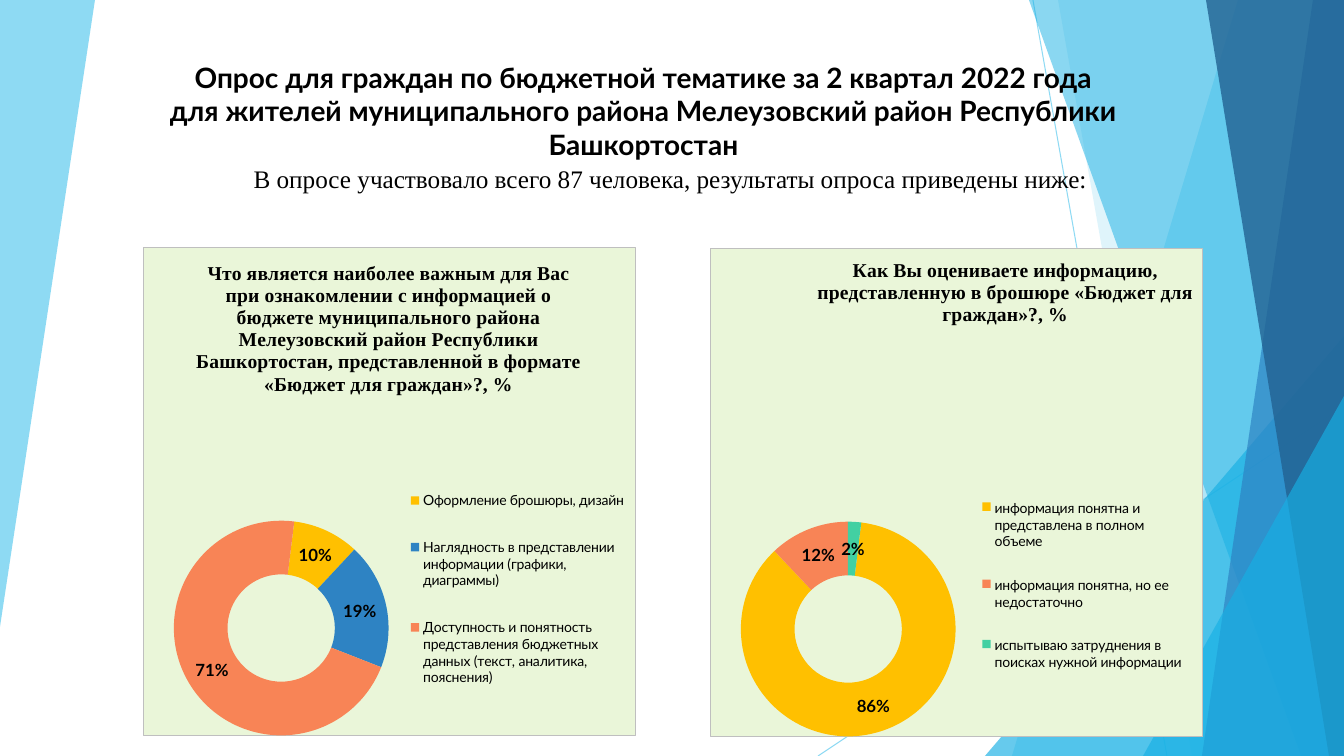
import dataclasses

import lxml.etree
import pptx
import pptx.chart.data
import pptx.dml.color
import pptx.enum.chart
import pptx.enum.shapes
import pptx.enum.text
import pptx.oxml
import pptx.oxml.ns
import pptx.util

WIDTH, HEIGHT = 1344, 756
EMU_PER_PX = 914400 / 100.8


def px(length):
    return pptx.util.Emu(round(length * EMU_PER_PX))


def rgb(color):
    return pptx.dml.color.RGBColor.from_string(color)


@dataclasses.dataclass(frozen=True)
class Theme:
    sans: str = "Lato"
    serif: str = "Times New Roman"
    text: str = "000000"
    sky: str = "5FCBEF"
    cyan: str = "17B0E4"
    blue: str = "2E83C3"
    navy: str = "226292"
    gold: str = "FFC000"
    coral: str = "F88456"
    mint: str = "42D0A2"
    panel: str = "EAF6D9"
    border: str = "BFBFBF"
    title_size: int = 20
    subtitle_size: int = 18
    chart_title_size: int = 14
    label_size: int = 12
    legend_size: int = 10
    hairline: float = 0.75


class SlideBuilder:
    def __init__(self, slide, theme):
        self.slide = slide
        self.theme = theme

    def style_font(self, font, size, name, bold=False):
        font.size = pptx.util.Pt(size)
        font.name = name
        font.bold = bold
        font.color.rgb = rgb(self.theme.text)

    def set_opacity(self, shape, percent):
        for color in shape._element.spPr.iter(pptx.oxml.ns.qn("a:srgbClr")):
            alpha = lxml.etree.SubElement(color, pptx.oxml.ns.qn("a:alpha"))
            alpha.set("val", str(percent * 1000))

    def paint(self, shape, color, opacity):
        shape.shadow.inherit = False
        shape.line.fill.background()
        shape.fill.solid()
        shape.fill.fore_color.rgb = rgb(color)
        self.set_opacity(shape, opacity)

    def polygon(self, points, color, opacity):
        builder = self.slide.shapes.build_freeform(*points[0], scale=EMU_PER_PX)
        builder.add_line_segments(points[1:], close=True)
        self.paint(builder.convert_to_shape(), color, opacity)

    def right_band(self, top_x, bottom_x, color, opacity):
        """Fill from a slanted left edge to the right side of the slide."""
        points = [(top_x, 0), (WIDTH, 0), (WIDTH, HEIGHT), (bottom_x, HEIGHT)]
        self.polygon(points, color, opacity)

    def corner_triangle(self, left, top, color, opacity):
        """Draw a triangle whose right angle is the slide's lower right corner."""
        shape = self.slide.shapes.add_shape(
            pptx.enum.shapes.MSO_SHAPE.ISOSCELES_TRIANGLE,
            px(left), px(top), px(WIDTH - left), px(HEIGHT - top))
        shape.adjustments[0] = 1
        self.paint(shape, color, opacity)

    def line(self, start, end, color, opacity):
        connector = self.slide.shapes.add_connector(
            pptx.enum.shapes.MSO_CONNECTOR.STRAIGHT, *map(px, start + end))
        connector.line.color.rgb = rgb(color)
        connector.line.width = pptx.util.Pt(self.theme.hairline)
        self.set_opacity(connector, opacity)
        lxml.etree.SubElement(connector._element.spPr, pptx.oxml.ns.qn("a:effectLst"))

    def text(self, box, content, size, font_name, anchor, bold=False):
        frame = self.slide.shapes.add_textbox(*map(px, box)).text_frame
        frame.word_wrap = True
        frame.vertical_anchor = anchor
        frame.text = content
        paragraph = frame.paragraphs[0]
        paragraph.alignment = pptx.enum.text.PP_ALIGN.CENTER
        for run in paragraph.runs:
            self.style_font(run.font, size, font_name, bold)

    def place(self, element, index, values, inner=False):
        """Give a chart part a manual layout: x, y and optionally w, h as fractions."""
        for old in element.findall(pptx.oxml.ns.qn("c:layout")):
            element.remove(old)
        target = '<c:layoutTarget val="inner"/>' if inner else ""
        modes = '<c:xMode val="edge"/><c:yMode val="edge"/>'
        numbers = "".join(f'<c:{tag} val="{value}"/>' for tag, value in zip("xywh", values))
        element.insert(index, pptx.oxml.parse_xml(
            f'<c:layout {pptx.oxml.ns.nsdecls("c")}><c:manualLayout>'
            f'{target}{modes}{numbers}</c:manualLayout></c:layout>'))

    def chart_panel(self, chart):
        theme = self.theme
        chart.element.chart.addnext(pptx.oxml.parse_xml(
            f'<c:spPr {pptx.oxml.ns.nsdecls("c", "a")}>'
            f'<a:solidFill><a:srgbClr val="{theme.panel}"/></a:solidFill>'
            f'<a:ln w="{pptx.util.Pt(theme.hairline)}"><a:solidFill>'
            f'<a:srgbClr val="{theme.border}"/></a:solidFill></a:ln></c:spPr>'))

    def doughnut(self, box, title, title_at, legend_at, answers):
        theme = self.theme
        data = pptx.chart.data.CategoryChartData()
        data.categories = [name for name, _, _ in answers]
        data.add_series("Series 1", [value for _, value, _ in answers])
        chart = self.slide.shapes.add_chart(
            pptx.enum.chart.XL_CHART_TYPE.DOUGHNUT, *map(px, box), data).chart
        self.style_font(chart.font, theme.legend_size, theme.sans)
        self.chart_panel(chart)

        chart.has_title = True
        frame = chart.chart_title.text_frame
        frame.text = title
        self.style_font(frame.paragraphs[0].runs[0].font,
                        theme.chart_title_size, theme.serif, bold=True)
        self.place(chart.chart_title._element, 1, title_at)

        chart.has_legend = True
        chart.legend.position = pptx.enum.chart.XL_LEGEND_POSITION.RIGHT
        chart.legend.include_in_layout = False
        self.style_font(chart.legend.font, theme.legend_size, theme.sans)
        self.place(chart.legend._element, 1, legend_at)

        self.place(chart.element.chart.plotArea, 0, (0.06, 0.56, 0.44, 0.44), inner=True)
        plot = chart.plots[0]
        plot.vary_by_categories = True
        for angle in plot._element.findall(pptx.oxml.ns.qn("c:firstSliceAng")):
            angle.set("val", "7")
        for index, (_, _, color) in enumerate(answers):
            fill = plot.series[0].points[index].format.fill
            fill.solid()
            fill.fore_color.rgb = rgb(color)
        plot.has_data_labels = True
        labels = plot.data_labels
        labels.show_value = False
        labels.show_percentage = True
        labels.number_format = "0%"
        labels.number_format_is_linked = False
        self.style_font(labels.font, theme.label_size, theme.sans, bold=True)


def main():
    presentation = pptx.Presentation()
    presentation.slide_width, presentation.slide_height = px(WIDTH), px(HEIGHT)
    theme = Theme()
    builder = SlideBuilder(
        presentation.slides.add_slide(presentation.slide_layouts[6]), theme)

    builder.polygon([(0, 0), (95, 0), (0, 627)], theme.sky, 70)
    builder.line((1033, 0), (1167, HEIGHT), theme.sky, 70)
    builder.line((WIDTH, 406), (818, HEIGHT), theme.sky, 70)
    builder.right_band(1238, 1012, theme.sky, 36)
    builder.right_band(1058, 1192, theme.sky, 20)
    builder.corner_triangle(985, 336, theme.cyan, 66)
    builder.right_band(1029, 1301, theme.cyan, 50)
    builder.right_band(1313, 1202, theme.blue, 70)
    builder.right_band(1206, 1329, theme.navy, 80)
    builder.corner_triangle(1143, 396, theme.cyan, 66)

    anchors = pptx.enum.text.MSO_ANCHOR
    builder.text((158, 59, 971, 107),
                 "Опрос для граждан по бюджетной тематике за 2 квартал 2022 года\v"
                 "для жителей муниципального района Мелеузовский район Республики Башкортостан",
                 theme.title_size, theme.sans, anchors.BOTTOM, bold=True)
    builder.text((194, 158, 953, 40),
                 "В опросе участвовало всего 87 человека, результаты опроса приведены ниже:",
                 theme.subtitle_size, theme.serif, anchors.TOP)

    builder.doughnut(
        (710, 248, 493, 489),
        "Как Вы оцениваете информацию, представленную в брошюре «Бюджет для граждан»?, %",
        (0.21, 0.01), (0.55, 0.46, 0.41, 0.46),
        [("информация понятна и представлена в полном объеме", 86, theme.gold),
         ("информация понятна, но ее недостаточно", 12, theme.coral),
         ("испытываю затруднения в поисках нужной информации", 2, theme.mint)])
    builder.doughnut(
        (143, 247, 493, 489),
        "Что является наиболее важным для Вас при ознакомлении с информацией о бюджете "
        "муниципального района Мелеузовский район Республики Башкортостан, "
        "представленной в формате «Бюджет для граждан»?, %",
        (0.1, 0.02), (0.54, 0.44, 0.44, 0.52),
        [("Оформление брошюры, дизайн", 10, theme.gold),
         ("Наглядность в представлении информации (графики, диаграммы)", 19, theme.blue),
         ("Доступность и понятность представления бюджетных данных "
          "(текст, аналитика, пояснения)", 71, theme.coral)])
    presentation.save("out.pptx")


if __name__ == "__main__":
    main()
